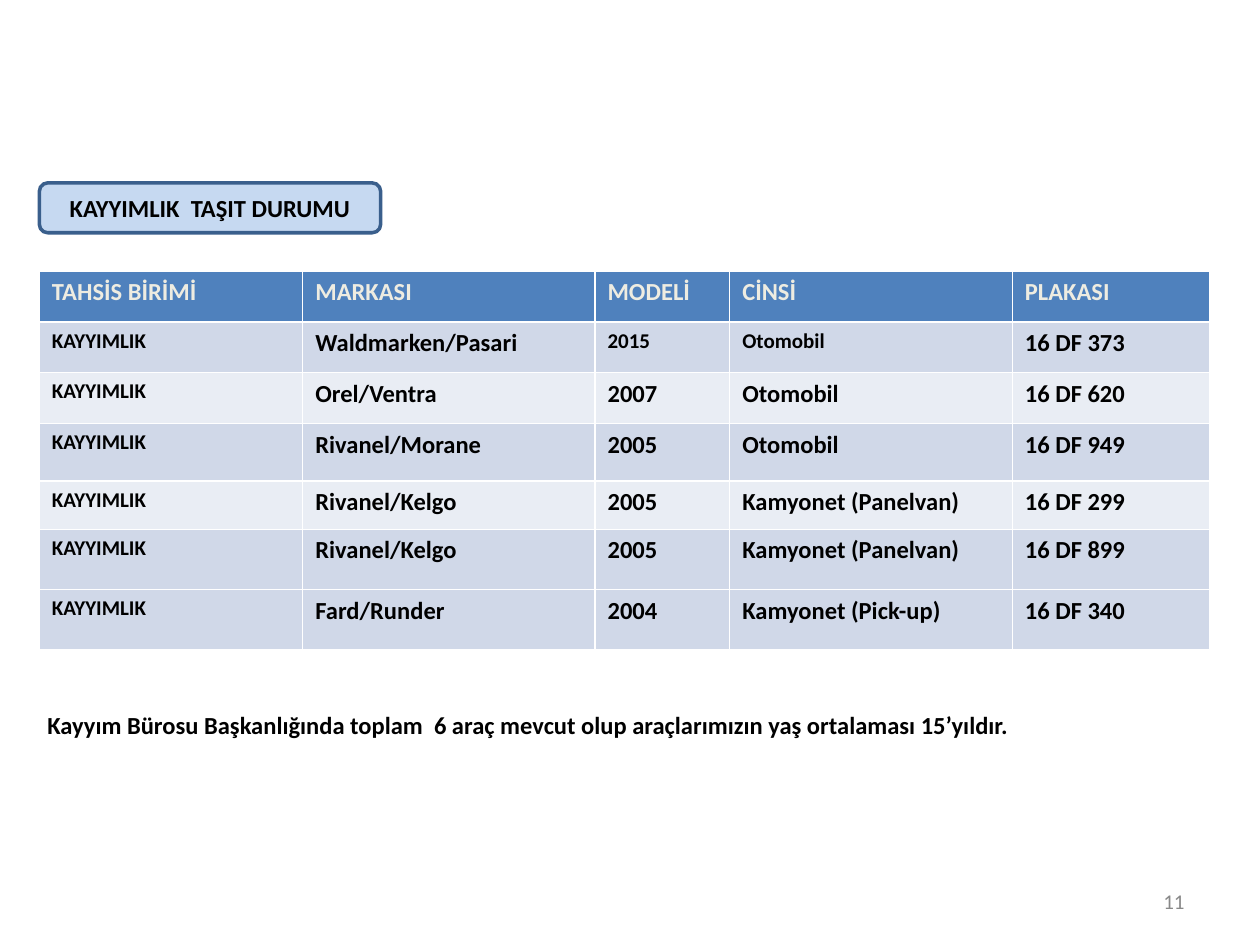
from pptx import Presentation
from pptx.dml.color import RGBColor as Color
from pptx.enum.shapes import MSO_SHAPE as Shape
from pptx.enum.text import MSO_ANCHOR as Anchor, PP_ALIGN as Align
from pptx.util import Pt

COLORS = {
    "text": "000000",
    "muted": "898989",
    "badge": "C6D9F1",
    "badge_line": "3A5F8C",
    "header": "4F81BD",
    "header_text": "EEECE1",
    "band_dark": "D0D8E8",
    "band_light": "E9EDF4",
}
HEADINGS = ["TAHSİS BİRİMİ", "MARKASI", "MODELİ", "CİNSİ", "PLAKASI"]
UNIT = "KAYYIMLIK"
VEHICLES = [
    ("Waldmarken/Pasari", "2015", "Otomobil", "16 DF 373"),
    ("Orel/Ventra", "2007", "Otomobil", "16 DF 620"),
    ("Rivanel/Morane", "2005", "Otomobil", "16 DF 949"),
    ("Rivanel/Kelgo", "2005", "Kamyonet (Panelvan)", "16 DF 299"),
    ("Rivanel/Kelgo", "2005", "Kamyonet (Panelvan)", "16 DF 899"),
    ("Fard/Runder", "2004", "Kamyonet (Pick-up)", "16 DF 340"),
]
COLUMN_WIDTHS = [150.5, 167, 77, 161.5, 113]
ROW_HEIGHTS = [29, 29, 29, 33, 27.5, 34.5, 34.5]
ROW_FILLS = ["header", "band_dark", "band_light", "band_dark",
             "band_light", "band_dark", "band_dark"]
SMALL_CELLS = {(1, 2), (1, 3)}


class SlideBuilder:
    """Hold the slide and its text style, and add each kind of element."""

    def __init__(self, slide, font="Calibri"):
        self.slide = slide
        self.font = font

    def color(self, name):
        return Color.from_string(COLORS[name])

    def set_text(self, text_frame, text, size=14, color="text", bold=True, align=Align.LEFT):
        text_frame.text = text
        for paragraph in text_frame.paragraphs:
            paragraph.alignment = align
            for run in paragraph.runs:
                run.font.name = self.font
                run.font.size = Pt(size)
                run.font.bold = bold
                run.font.color.rgb = self.color(color)

    def badge(self, left, top, width, height, text):
        shape = self.slide.shapes.add_shape(
            Shape.ROUNDED_RECTANGLE, Pt(left), Pt(top), Pt(width), Pt(height))
        shape.shadow.inherit = False
        shape.fill.solid()
        shape.fill.fore_color.rgb = self.color("badge")
        shape.line.color.rgb = self.color("badge_line")
        shape.line.width = Pt(2)
        shape.text_frame.vertical_anchor = Anchor.MIDDLE
        self.set_text(shape.text_frame, text, align=Align.CENTER)

    def text(self, left, top, width, height, text, anchor=Anchor.TOP, **style):
        box = self.slide.shapes.add_textbox(Pt(left), Pt(top), Pt(width), Pt(height))
        box.text_frame.word_wrap = True
        box.text_frame.vertical_anchor = anchor
        self.set_text(box.text_frame, text, **style)

    def table(self, left, top, rows):
        table = self.slide.shapes.add_table(
            len(rows), len(COLUMN_WIDTHS), Pt(left), Pt(top),
            Pt(sum(COLUMN_WIDTHS)), Pt(sum(ROW_HEIGHTS))).table
        for column, width in zip(table.columns, COLUMN_WIDTHS):
            column.width = Pt(width)
        for row, height in zip(table.rows, ROW_HEIGHTS):
            row.height = Pt(height)
        for row_index, values in enumerate(rows):
            is_header = row_index == 0
            for column_index, value in enumerate(values):
                cell = table.cell(row_index, column_index)
                cell.fill.solid()
                cell.fill.fore_color.rgb = self.color(ROW_FILLS[row_index])
                is_small = not is_header and (
                    column_index == 0 or (row_index, column_index) in SMALL_CELLS)
                self.set_text(cell.text_frame, value, size=12 if is_small else 14,
                              color="header_text" if is_header else "text")


def main():
    presentation = Presentation()
    presentation.slide_width, presentation.slide_height = Pt(720), Pt(540)
    builder = SlideBuilder(presentation.slides.add_slide(presentation.slide_layouts[6]))
    builder.badge(22.5, 104.5, 195, 28.5, "KAYYIMLIK  TAŞIT DURUMU")
    builder.table(22.5, 155, [HEADINGS] + [(UNIT, *vehicle) for vehicle in VEHICLES])
    builder.text(20, 402, 664, 24.5,
                 "Kayyım Bürosu Başkanlığında toplam  6 araç mevcut olup "
                 "araçlarımızın yaş ortalaması 15’yıldır.")
    builder.text(516, 500.5, 168, 28.75, "11", anchor=Anchor.MIDDLE,
                 size=12, color="muted", bold=False, align=Align.RIGHT)
    presentation.save("out.pptx")


if __name__ == "__main__":
    main()
